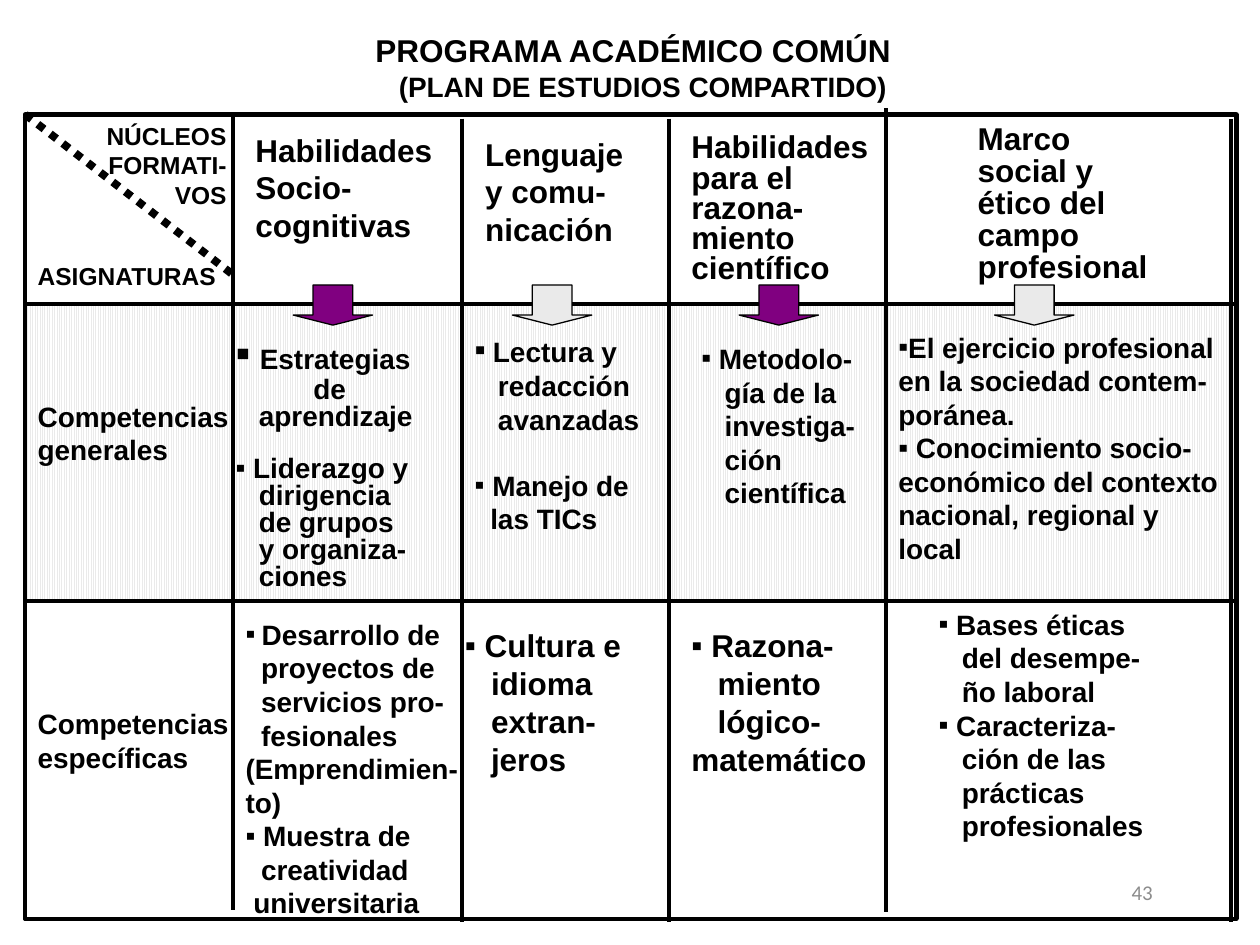
from dataclasses import dataclass

from lxml import etree
from pptx import Presentation
from pptx.dml.color import RGBColor
from pptx.enum.dml import MSO_LINE, MSO_PATTERN
from pptx.enum.shapes import MSO_CONNECTOR, MSO_SHAPE
from pptx.enum.text import MSO_ANCHOR, MSO_AUTO_SIZE, PP_ALIGN
from pptx.oxml.ns import qn
from pptx.util import Cm, Pt

RECTANGLE = MSO_SHAPE.RECTANGLE
RIGHT_ARROW = MSO_SHAPE.RIGHT_ARROW
STRAIGHT = MSO_CONNECTOR.STRAIGHT
DOTTED = MSO_LINE.ROUND_DOT
NARROW_VERTICAL = MSO_PATTERN.NARROW_VERTICAL
LEFT, RIGHT, JUSTIFY = PP_ALIGN.LEFT, PP_ALIGN.RIGHT, PP_ALIGN.JUSTIFY
MIDDLE = MSO_ANCHOR.MIDDLE
FIT_SHAPE = MSO_AUTO_SIZE.SHAPE_TO_FIT_TEXT


@dataclass(frozen=True)
class Theme:
    black: RGBColor = RGBColor(0, 0, 0)
    white: RGBColor = RGBColor(255, 255, 255)
    gray: RGBColor = RGBColor(0xEA, 0xEA, 0xEA)
    purple: RGBColor = RGBColor(0x80, 0, 0x80)
    number: RGBColor = RGBColor(0x8C, 0x8C, 0x8C)
    font: str = "Arial"
    light_font: str = "Calibri"
    heading: int = 18
    body: int = 16
    label: int = 14
    small: int = 12
    space_width: float = 0.0098


THEME = Theme()


@dataclass(frozen=True)
class Line:
    text: str
    indent: int = 0
    bullet: bool = False
    lead_size: int = 0
    space_before: float = 0
    size: int = 0


@dataclass(frozen=True)
class TextBlock:
    left: float
    top: float
    width: float
    height: float
    lines: list[Line]
    size: int = THEME.body
    spacing: float = 1
    alignment: PP_ALIGN = LEFT
    wrap: bool = False


@dataclass(frozen=True)
class Band:
    top: float
    height: float
    line_width: float = 2.25
    patterned: bool = False


@dataclass(frozen=True)
class Rule:
    start: tuple[float, float]
    end: tuple[float, float]
    width: float = 2.25
    dotted: bool = False


@dataclass(frozen=True)
class Arrow:
    center: float
    color: RGBColor


def plain(*texts: str, indent: int = 0) -> list[Line]:
    return [Line(text, indent) for text in texts]


def bullet(text: str, lead_size: int = 0, space_before: float = 0) -> Line:
    return Line(text, bullet=True, lead_size=lead_size, space_before=space_before)


BOARD_LEFT, BOARD_WIDTH = 0.51, 24.41
ARROW_LENGTH, ARROW_BREADTH, ARROW_MIDDLE = 0.81, 1.6, 6.15

BANDS = [Band(2.31, 16.21, 3), Band(2.31, 3.81), Band(6.12, 6.2, patterned=True), Band(12.12, 6.4)]
RULES = [Rule((0.51, 2.31), (4.7, 5.54), 4.5, True)] + [
    Rule((x, top), (x, bottom))
    for x, top, bottom in [(4.7, 2.31, 18.34), (9.32, 2.39, 18.59), (13.49, 2.39, 18.59),
                           (17.86, 2.18, 18.39), (24.82, 2.39, 18.59)]
]
ARROWS = [Arrow(6.71, THEME.purple), Arrow(11.13, THEME.gray),
          Arrow(15.7, THEME.purple), Arrow(20.85, THEME.gray)]

TITLE = TextBlock(7.32, 0.51, 10.95, 2.39, [
    Line("PROGRAMA ACADÉMICO COMÚN", size=THEME.heading),
    Line("(PLAN DE ESTUDIOS COMPARTIDO)", 3)])
LABELS = [
    TextBlock(1.9, 2.31, 2.92, 2.62, plain("NÚCLEOS", "FORMATI-", "VOS"), THEME.label, alignment=RIGHT),
    TextBlock(0.51, 5.13, 4.14, 0.84, plain("ASIGNATURAS"), THEME.label),
    TextBlock(0.51, 7.92, 4.52, 2.29, plain("Competencias", "generales")),
    TextBlock(0.51, 14.12, 4.52, 2.97, plain("Competencias", "específicas")),
]
HEADINGS = [
    TextBlock(4.9, 2.51, 4.06, 2.54, plain("Habilidades", "Socio-", "cognitivas"), THEME.heading),
    TextBlock(9.53, 2.59, 3.3, 2.54, plain("Lenguaje", "y comu-", "nicación"), THEME.heading),
    TextBlock(13.69, 2.59, 4.06, 3.3,
              plain("Habilidades", "para el", "razona-", "miento", "científico"), THEME.heading, 0.8),
    TextBlock(19.46, 2.39, 3.94, 3.51,
              plain("Marco", "social y", "ético del", "campo", "profesional"), THEME.heading, 0.85),
]
GENERAL_SKILLS = [
    TextBlock(4.5, 6.68, 4.19, 5.46, [
        bullet("Estrategias", 24), Line("de", 10), Line("aprendizaje", 3),
        bullet(" Liderazgo y", space_before=14.7),
        *plain("dirigencia", "de grupos", "y organiza-", "ciones", indent=3)], spacing=0.8),
    TextBlock(9.32, 6.55, 3.89, 4.45, [
        bullet("Lectura y", 18), *plain("redacción", "avanzadas", indent=3),
        bullet(" Manejo de", space_before=18.4), Line("las TICs", 2)]),
    TextBlock(13.89, 6.76, 3.66, 3.68, [
        bullet(" Metodolo-"), *plain("gía de la", "investiga-", "ción", "científica", indent=3)]),
    TextBlock(17.86, 6.53, 7.54, 5.92, [
        bullet("El ejercicio profesional"), *plain("en la sociedad contem-", "poránea."),
        bullet(" Conocimiento socio-económico del contexto nacional, regional y"),
        Line("local")], wrap=True),
]
SPECIFIC_SKILLS = [
    TextBlock(4.7, 12.32, 4.85, 6.4, [
        bullet("Desarrollo de", 16), *plain("proyectos de", "servicios pro-", "fesionales", indent=2),
        *plain("(Emprendimien-", "to)"),
        bullet(" Muestra de"), Line("creatividad", 2), Line("universitaria", 1)]),
    TextBlock(9.12, 12.5, 3.76, 4.11, [
        bullet(" Cultura e"), *plain("idioma", "extran-", "jeros", indent=3)], THEME.heading),
    TextBlock(13.69, 12.5, 4.04, 3.3, [
        bullet(" Razona-"), *plain("miento", "lógico-", indent=3), Line("matemático")], THEME.heading),
    TextBlock(18.67, 12.12, 5.16, 5.05, [
        bullet(" Bases éticas"), *plain("del desempe-", "ño laboral", indent=3),
        bullet(" Caracteriza-"), *plain("ción de las", "prácticas", "profesionales", indent=3)],
        alignment=JUSTIFY, wrap=True),
]


def format_run(run, size: int, font: str = THEME.font, bold: bool = True,
               color: RGBColor = THEME.black) -> None:
    run.font.size, run.font.name, run.font.bold = Pt(size), font, bold
    run.font.color.rgb = color


def write_line(paragraph, line: Line, block: TextBlock) -> None:
    size = line.size or block.size
    paragraph.alignment = block.alignment
    paragraph.line_spacing = block.spacing
    paragraph.space_before = Pt(line.space_before)
    properties = paragraph._p.get_or_add_pPr()
    properties.set("marL", str(Cm(line.indent * size * THEME.space_width)))
    properties.set("indent", "0")
    if line.bullet:
        etree.SubElement(properties, qn("a:buFont")).set("typeface", THEME.font)
        etree.SubElement(properties, qn("a:buChar")).set("char", "▪")
    if line.lead_size:
        paragraph.text = " "
        format_run(paragraph.runs[0], line.lead_size, THEME.light_font, False)
        run = paragraph.add_run()
        run.text = line.text
    else:
        paragraph.text = line.text
    format_run(paragraph.runs[-1], size)


def draw_text(slide, block: TextBlock) -> None:
    shape = slide.shapes.add_textbox(Cm(block.left), Cm(block.top), Cm(block.width), Cm(block.height))
    text_frame = shape.text_frame
    text_frame.word_wrap = block.wrap
    text_frame.auto_size = FIT_SHAPE
    if block.alignment == RIGHT:
        text_frame.margin_left = Cm(0)
    else:
        text_frame.margin_right = Cm(0)
    text_frame.text = "\n".join(line.text for line in block.lines)
    for paragraph, line in zip(text_frame.paragraphs, block.lines):
        write_line(paragraph, line, block)


def outline(shape, width: float) -> None:
    shape.shadow.inherit = False
    shape.line.color.rgb = THEME.black
    shape.line.width = Pt(width)


def draw_band(slide, band: Band) -> None:
    shape = slide.shapes.add_shape(RECTANGLE, Cm(BOARD_LEFT), Cm(band.top), Cm(BOARD_WIDTH), Cm(band.height))
    outline(shape, band.line_width)
    if band.patterned:
        shape.fill.patterned()
        shape.fill.pattern = NARROW_VERTICAL
        shape.fill.fore_color.rgb, shape.fill.back_color.rgb = THEME.gray, THEME.white
    else:
        shape.fill.solid()
        shape.fill.fore_color.rgb = THEME.white


def draw_rule(slide, rule: Rule) -> None:
    connector = slide.shapes.add_connector(STRAIGHT, *map(Cm, rule.start + rule.end))
    connector.line.color.rgb = THEME.black
    connector.line.width = Pt(rule.width)
    if rule.dotted:
        connector.line.dash_style = DOTTED
    etree.SubElement(connector._element.spPr, qn("a:effectLst"))


def draw_arrow(slide, arrow: Arrow) -> None:
    shape = slide.shapes.add_shape(
        RIGHT_ARROW, Cm(arrow.center - ARROW_LENGTH / 2), Cm(ARROW_MIDDLE - ARROW_BREADTH / 2),
        Cm(ARROW_LENGTH), Cm(ARROW_BREADTH))
    shape.rotation = 90
    shape.adjustments[0], shape.adjustments[1] = 0.5, 0.25
    shape.fill.solid()
    shape.fill.fore_color.rgb = arrow.color
    outline(shape, 0.75)


def draw_slide_number(slide) -> None:
    shape = slide.shapes.add_textbox(Cm(18.21), Cm(17.35), Cm(5.28), Cm(1.27))
    text_frame = shape.text_frame
    text_frame.word_wrap = True
    text_frame.vertical_anchor = MIDDLE
    text_frame.text = "43"
    paragraph = text_frame.paragraphs[0]
    paragraph.alignment = RIGHT
    format_run(paragraph.runs[0], THEME.small, THEME.light_font, False, THEME.number)


def main() -> None:
    presentation = Presentation()
    presentation.slide_width, presentation.slide_height = Cm(25.4), Cm(19.05)
    slide = presentation.slides.add_slide(presentation.slide_layouts[6])
    for draw, items in [(draw_band, BANDS), (draw_rule, RULES), (draw_arrow, ARROWS)]:
        for item in items:
            draw(slide, item)
    for block in [TITLE, *LABELS, *HEADINGS, *GENERAL_SKILLS, *SPECIFIC_SKILLS]:
        draw_text(slide, block)
    draw_slide_number(slide)
    presentation.save("out.pptx")


if __name__ == "__main__":
    main()
